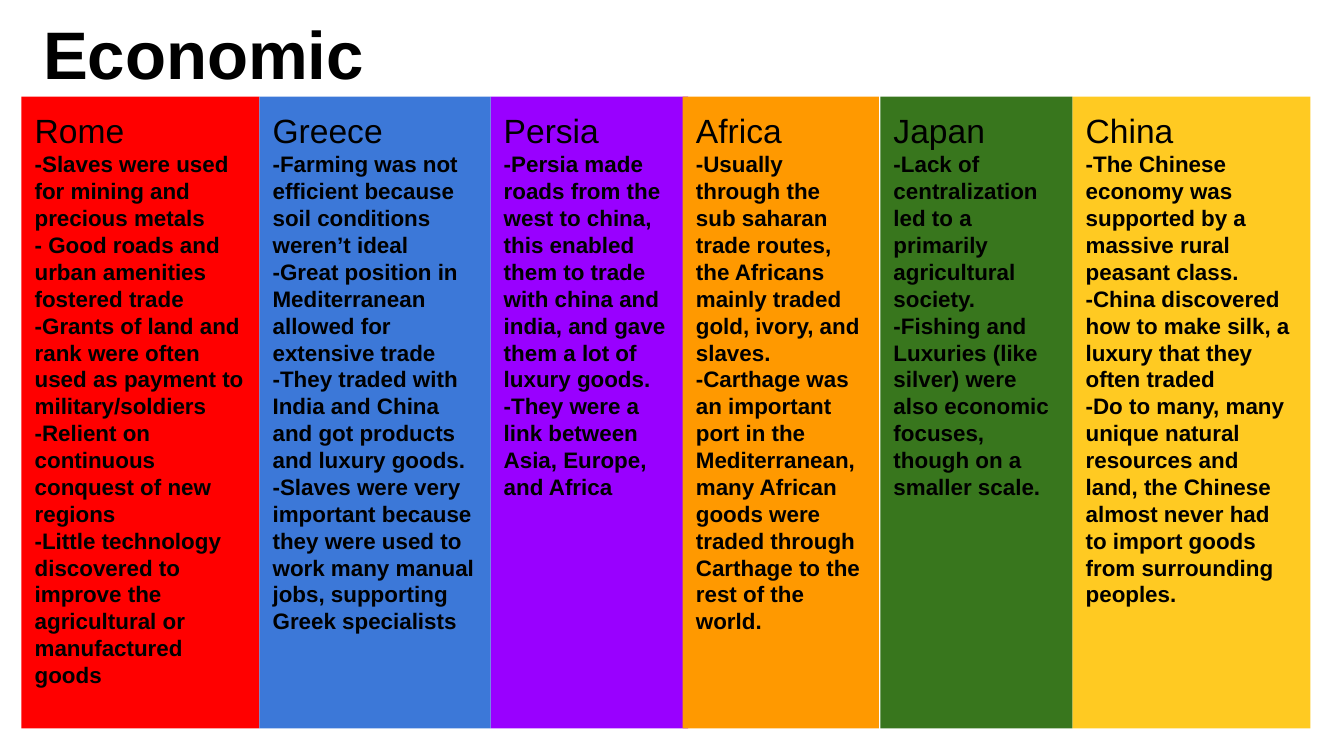
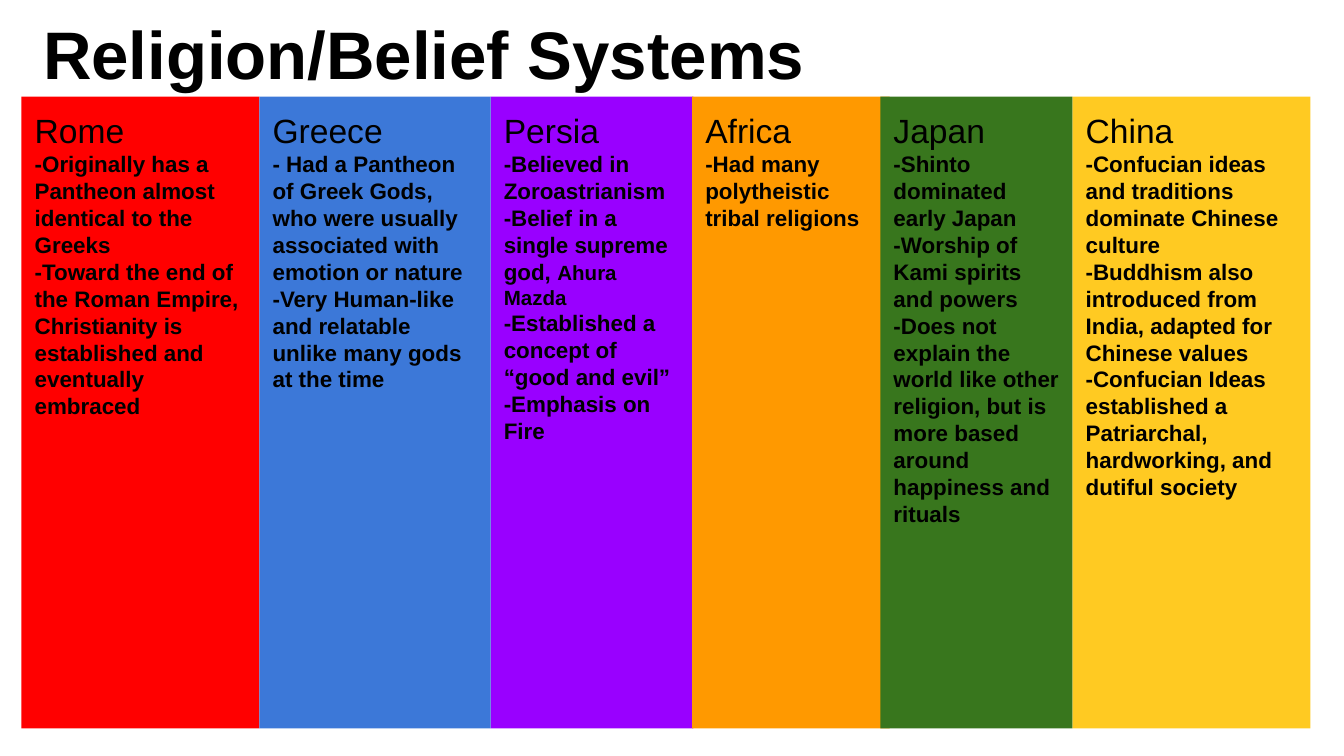
import dataclasses

import pptx
import pptx.dml.color
import pptx.enum.shapes
import pptx.enum.text
import pptx.util


@dataclasses.dataclass(frozen=True)
class Theme:
    """Sizes in inches, type in points and colours shared by the slides."""
    width: float = 10
    height: float = 10 * 9 / 16
    title_box: tuple = (0.22, 0.07, 9, 0.72)
    band_top: float = 0.72
    band_height: float = 4.7
    inset: float = 0.1
    font: str = "Arial"
    ink: str = "000000"
    title_size: int = 36
    heading_size: int = 18
    body_size: int = 12
    small_size: int = 11
    line_spacing: float = 1.0


THEME = Theme()

REGION_COLOURS = {
    "Rome": "FF0000",
    "Persia": "9900FF",
    "Africa": "FF9900",
    "China": "FFCA22",
    "Greece": "3C78D8",
    "Japan": "38761D",
}

REGION_SPANS = {
    "Rome": (0.16, 1.77),
    "Greece": (1.93, 1.72),
    "Persia": (3.65, 1.47),
    "Africa": (5.08, 1.46),
    "Japan": (6.55, 1.43),
    "China": (7.98, 1.77),
}

RELIGION_SPANS = REGION_SPANS | {"Persia": (3.65, 1.51), "Africa": (5.15, 1.47)}

ECONOMIC = {
    "Rome": [
        "-Slaves were used for mining and precious metals",
        "- Good roads and urban amenities fostered trade",
        "-Grants of land and rank were often used as payment to military/soldiers",
        "-Relient on continuous conquest of new regions",
        "-Little technology discovered to improve the agricultural or manufactured goods",
    ],
    "Persia": [
        "-Persia made roads from the west to china, this enabled them to trade "
        "with china and india, and gave them a lot of luxury goods.",
        "-They were a link between Asia, Europe, and Africa",
    ],
    "Africa": [
        "-Usually through the sub saharan trade routes, the Africans mainly "
        "traded gold, ivory, and slaves.",
        "-Carthage was an important port in the Mediterranean, many African "
        "goods were traded through Carthage to the rest of the world.",
    ],
    "China": [
        "-The Chinese economy was supported by a massive rural peasant class.",
        "-China discovered how to make silk, a luxury that they often traded",
        "-Do to many, many unique natural resources and land, the Chinese "
        "almost never had to import goods from surrounding peoples.",
    ],
    "Greece": [
        "-Farming was not",
        "efficient because soil conditions weren’t ideal",
        "-Great position in Mediterranean allowed for extensive trade",
        "-They traded with India and China and got products and luxury goods.",
        "-Slaves were very important because they were used to work many "
        "manual jobs, supporting Greek specialists",
    ],
    "Japan": [
        "-Lack of centralization led to a primarily agricultural society.",
        "-Fishing and Luxuries (like silver) were also economic focuses, "
        "though on a smaller scale.",
    ],
}

RELIGION = {
    "Rome": [
        "-Originally has a Pantheon almost identical to the Greeks",
        "-Toward the end of the Roman Empire, Christianity is established and "
        "eventually embraced",
    ],
    "Persia": [
        "-Believed in Zoroastrianism",
        ("-Belief in a single supreme god, ", "Ahura Mazda"),
        "-Established a concept of “good and evil”",
        "-Emphasis on Fire",
    ],
    "Africa": ["-Had many polytheistic tribal religions"],
    "China": [
        "-Confucian ideas and traditions dominate Chinese culture",
        "-Buddhism also introduced from India, adapted for Chinese values",
        "-Confucian Ideas established a Patriarchal, hardworking, and dutiful society",
    ],
    "Greece": [
        "- Had a Pantheon of Greek Gods, who were usually associated with "
        "emotion or nature",
        "-Very Human-like and relatable unlike many gods at the time",
    ],
    "Japan": [
        "-Shinto dominated early Japan",
        "-Worship of Kami spirits and powers",
        "-Does not explain the world like other religion, but is more based "
        "around happiness and rituals",
    ],
}


def inches(*lengths):
    """Convert lengths in inches to slide units."""
    return [pptx.util.Inches(length) for length in lengths]


def rgb(code):
    """Turn a hex code into a colour."""
    return pptx.dml.color.RGBColor.from_string(code)


def write(paragraph, text, size=THEME.body_size, bold=True, colour=THEME.ink):
    """Append formatted text to a left-aligned paragraph."""
    paragraph.alignment = pptx.enum.text.PP_ALIGN.LEFT
    paragraph.line_spacing = THEME.line_spacing
    run = paragraph.add_run()
    run.text = text
    run.font.name = THEME.font
    run.font.size = pptx.util.Pt(size)
    run.font.bold = bold
    run.font.color.rgb = rgb(colour)


def prepare_frame(frame, anchor):
    """Set wrapping, insets and anchor of a text frame."""
    frame.word_wrap = True
    frame.auto_size = pptx.enum.text.MSO_AUTO_SIZE.NONE
    frame.vertical_anchor = anchor
    inset = pptx.util.Inches(THEME.inset)
    frame.margin_left = frame.margin_right = inset
    frame.margin_top = frame.margin_bottom = inset


def add_title(slide, text):
    """Place and fill the title placeholder."""
    title = slide.shapes.title
    title.left, title.top, title.width, title.height = inches(*THEME.title_box)
    prepare_frame(title.text_frame, pptx.enum.text.MSO_ANCHOR.BOTTOM)
    write(title.text_frame.paragraphs[0], text, size=THEME.title_size)


def add_region(slide, region, span, points):
    """Draw one region's coloured column with its heading and points."""
    left, width = span
    column = slide.shapes.add_shape(
        pptx.enum.shapes.MSO_SHAPE.RECTANGLE,
        *inches(left, THEME.band_top, width, THEME.band_height))
    column.shadow.inherit = False
    column.fill.solid()
    column.fill.fore_color.rgb = rgb(REGION_COLOURS[region])
    column.line.fill.background()
    frame = column.text_frame
    prepare_frame(frame, pptx.enum.text.MSO_ANCHOR.TOP)
    write(frame.paragraphs[0], region, size=THEME.heading_size, bold=False)
    for point in points:
        paragraph = frame.add_paragraph()
        main_text, *small_texts = (point,) if isinstance(point, str) else point
        write(paragraph, main_text)
        for small_text in small_texts:
            write(paragraph, small_text, size=THEME.small_size)


def add_comparison(deck, title, spans, regions):
    """Add a slide that compares the regions side by side."""
    slide = deck.slides.add_slide(deck.slide_layouts.get_by_name("Title Only"))
    add_title(slide, title)
    for region, points in regions.items():
        add_region(slide, region, spans[region], points)


def main():
    """Build and save the deck."""
    deck = pptx.Presentation()
    deck.slide_width, deck.slide_height = inches(THEME.width, THEME.height)
    add_comparison(deck, "Economic", REGION_SPANS, ECONOMIC)
    add_comparison(deck, "Religion/Belief Systems", RELIGION_SPANS, RELIGION)
    deck.save("out.pptx")


if __name__ == "__main__":
    main()
